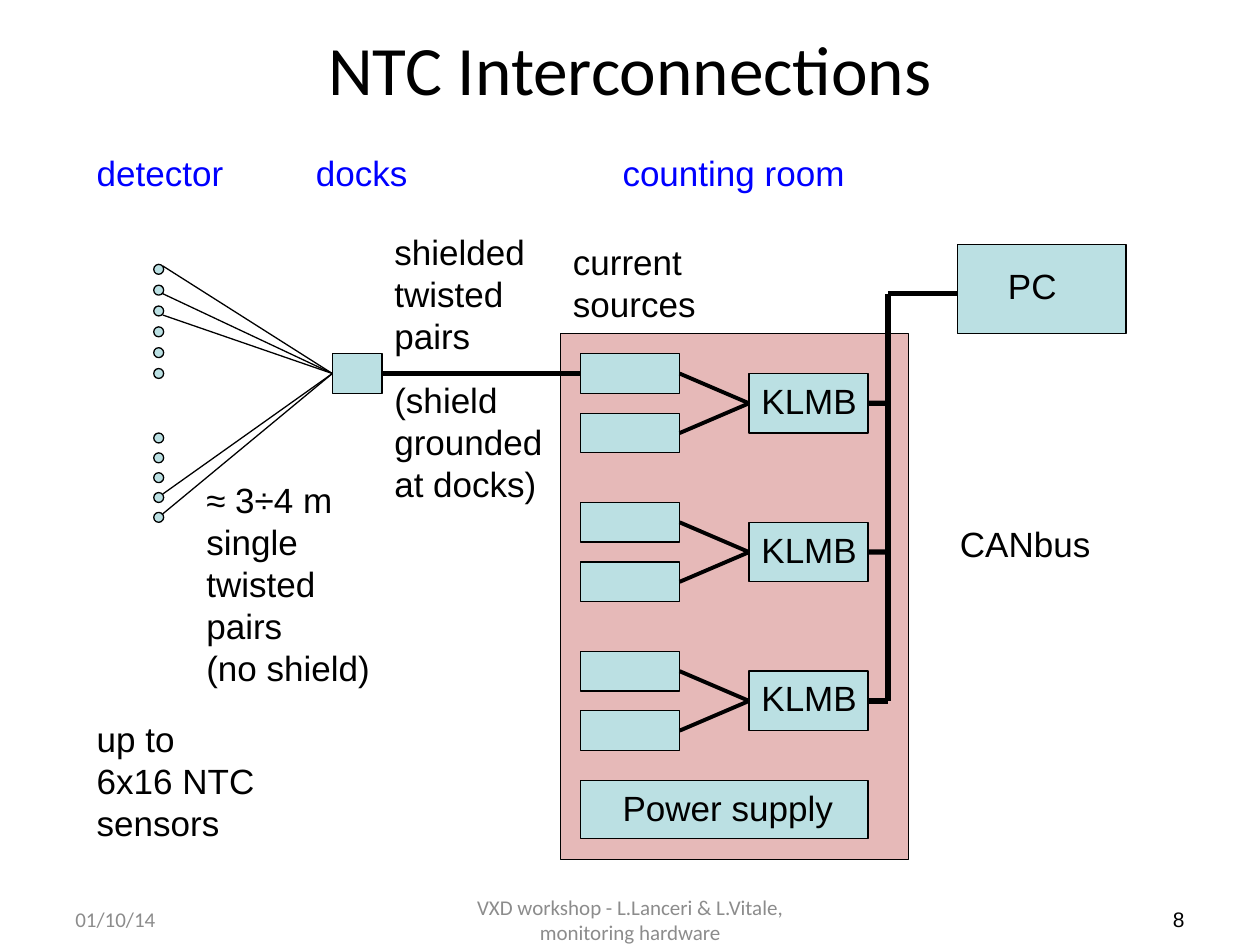
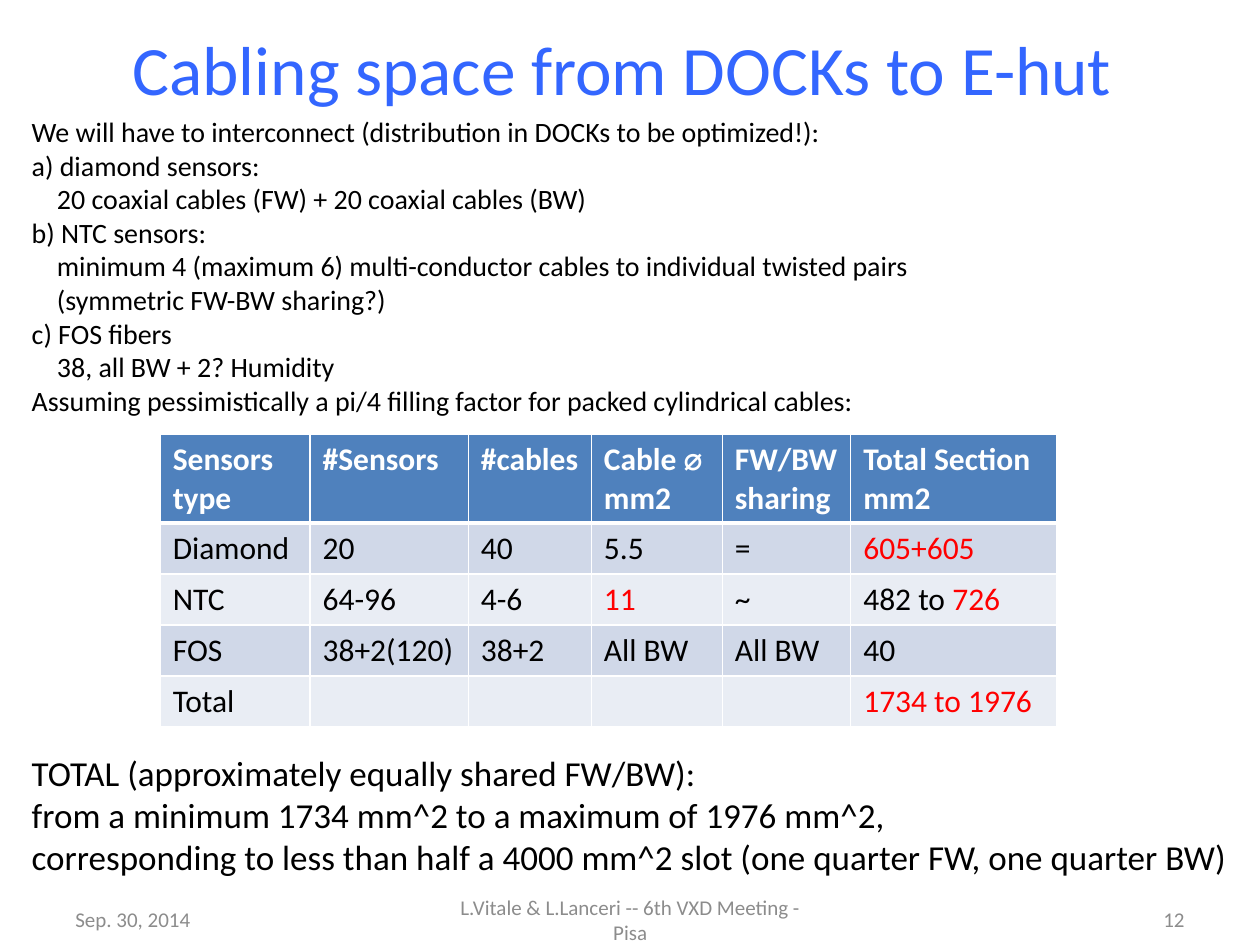
import pptx
import pptx.util
import pptx.dml.color
import pptx.enum.shapes
import pptx.enum.text
import lxml.etree

Cm = pptx.util.Cm
Pt = pptx.util.Pt
KIND = pptx.enum.shapes.MSO_SHAPE
ALIGN = pptx.enum.text.PP_ALIGN
MID = pptx.enum.text.MSO_ANCHOR.MIDDLE

BLACK, WHITE, GREY, RED = "000000", "FFFFFF", "8C8C8C", "FF0000"
BLUE, SKY = "0000FF", "3366FF"
PALE, PINK = "BBE0E3", "E6B9B8"
HEAD, BANDS = "4F81BD", ("D0D8E8", "E9EDF4")
NS = "http://schemas.openxmlformats.org/drawingml/2006/main"

FOOT = {"top": 18.03, "high": 1.01}
BOARD = "KLMB"
ZONES = [("detector", 1.7), ("docks", 6.12), ("counting room", 12.3)]
LABELS = [
    ("up to\n6x16 NTC\nsensors", 1.7, 14.33, 3.71, 2.82),
    ("PC", 20.07, 5.21, 1.5, 1.12),
    ("CANbus", 19.1, 10.41, 3.18, 1.12),
    ("Power supply", 12.3, 15.73, 4.8, 1.12),
    ("≈ 3÷4 m\nsingle\ntwisted\npairs\n(no shield)", 3.91, 9.53, 3.84, 4.52),
    ("shielded\ntwisted\npairs", 7.7, 4.52, 3.18, 2.82),
    ("(shield\ngrounded\nat docks)", 7.7, 7.5, 3.53, 2.82),
    ("current\nsources", 11.3, 4.72, 3.0, 1.96),
]
DOTS = [(5.33, 0.42, 6), (8.73, 0.4, 5)]
WIRES = [5.36, 5.92, 6.35, 9.96, 10.36]
GROUPS, PITCH = 3, 3.0
BUS_X, BUS_TOP = 17.9, 5.92

INTRO = [
    ("We will have to interconnect (distribution in DOCKs to be optimized!):", 0),
    ("a) diamond sensors:", 0),
    ("20 coaxial cables (FW) + 20 coaxial cables (BW)", 1),
    ("b) NTC sensors:", 0),
    ("minimum 4 (maximum 6) multi-conductor cables to individual twisted pairs", 1),
    ("(symmetric FW-BW sharing?)", 1),
    ("c) FOS fibers", 0),
    ("38, all BW + 2? Humidity", 1),
    ("Assuming pessimistically a pi/4 filling factor for packed cylindrical cables:", 0),
]
TOTAL = [
    "TOTAL (approximately equally shared FW/BW):",
    "from a minimum 1734 mm^2 to a maximum of 1976 mm^2,",
    "corresponding to less than half a 4000 mm^2 slot (one quarter FW, one quarter BW)",
]
ROWS = [
    ["Sensors type", "#Sensors", "#cables", "Cable ⌀\nmm2", "FW/BW\nsharing", "Total Section\nmm2"],
    ["Diamond", "20", "40", "5.5", "=", "|605+605"],
    ["NTC", "64-96", "4-6", "|11", "~", "482 to |726"],
    ["FOS", "38+2(120)", "38+2", "All BW", "All BW", "40"],
    ["Total", "", "", "", "", "|1734 to 1976"],
]
WIDTHS = [3.02, 3.19, 2.48, 2.64, 2.59, 4.16]


def tint(code):
    return pptx.dml.color.RGBColor.from_string(code)


def write(frame, text, size=20, font="Arial", color=BLACK, bold=False, align=None):
    for line in text.split("\n"):
        para = frame.paragraphs[-1]
        if para.runs:
            para = frame.add_paragraph()
        para.alignment = align
        for part, shade in zip(line.split("|"), (color, RED)):
            if part:
                run = para.add_run()
                run.text = part
                run.font.size = Pt(size)
                run.font.name = font
                run.font.bold = bold
                run.font.color.rgb = tint(shade)


def label(slide, text, x, y, w, h, wrap=False, anchor=None, **form):
    frame = slide.shapes.add_textbox(Cm(x), Cm(y), Cm(w), Cm(h)).text_frame
    frame.word_wrap = wrap
    frame.vertical_anchor = anchor
    write(frame, text, **form)
    return frame


def box(slide, x, y, w, h, fill=PALE, kind=KIND.RECTANGLE):
    shape = slide.shapes.add_shape(kind, Cm(x), Cm(y), Cm(w), Cm(h))
    shape.shadow.inherit = False
    shape.fill.solid()
    shape.fill.fore_color.rgb = tint(fill)
    shape.line.color.rgb = tint(BLACK)
    shape.line.width = Pt(0.75)
    return shape


def link(slide, start, end, width):
    line = slide.shapes.add_connector(pptx.enum.shapes.MSO_CONNECTOR.STRAIGHT, 0, 0, 0, 0)
    if isinstance(start[0], (int, float)):
        line.begin_x, line.begin_y = Cm(start[0]), Cm(start[1])
    else:
        line.begin_connect(*start)
    if isinstance(end[0], (int, float)):
        line.end_x, line.end_y = Cm(end[0]), Cm(end[1])
    else:
        line.end_connect(*end)
    line.line.color.rgb = tint(BLACK)
    line.line.width = Pt(width)
    lxml.etree.SubElement(line._element.spPr, f"{{{NS}}}effectLst")


def base(deck, title, color, date, foot, number, look):
    slide = deck.slides.add_slide(deck.slide_layouts[5])
    head = slide.shapes.title
    head.left, head.top, head.width, head.height = Cm(1.27), Cm(0.36), Cm(22.86), Cm(2.03)
    head.text_frame.auto_size = pptx.enum.text.MSO_AUTO_SIZE.NONE
    head.text_frame.vertical_anchor = MID
    write(head.text_frame, title, size=39.6, font="Calibri", color=color, align=ALIGN.CENTER)
    plain = {"font": "Calibri", "color": GREY}
    for text, x, w, align, form in [
        (date, 1.27, 5.92, ALIGN.LEFT, plain),
        (foot, 8.68, 8.05, ALIGN.CENTER, plain),
        (number, 18.21, 5.92, ALIGN.RIGHT, look or plain),
    ]:
        label(slide, text, x, FOOT["top"], w, FOOT["high"], wrap=True, anchor=MID,
              size=12, align=align, **form)
    return slide


def wiring(deck):
    slide = base(deck, "NTC Interconnections", BLACK, "01/10/14",
                 "VXD workshop - L.Lanceri & L.Vitale, monitoring hardware", "8",
                 {"font": "Arial", "color": BLACK})
    box(slide, 11.3, 6.73, 7.01, 10.6, fill=PINK)
    tops = [7.13 + PITCH * i for i in range(GROUPS)]
    pairs = [[box(slide, 11.7, top + step, 2, 0.8) for step in (0, 1.2)] for top in tops]
    boards = [box(slide, 15.1, top + 0.4, 2.4, 1.2) for top in tops]
    box(slide, 11.7, 15.73, 5.8, 1.18)
    box(slide, 19.3, 4.93, 3.4, 1.8)
    dock = box(slide, 6.7, 7.13, 1, 0.8)
    for top, gap, count in DOTS:
        for i in range(count):
            box(slide, 3.1, top + gap * i, 0.2, 0.2, kind=KIND.OVAL)

    link(slide, (dock, 3), (pairs[0][0], 1), 3)
    for top, pair, board in zip(tops, pairs, boards):
        for source in pair:
            link(slide, (source, 3), (board, 1), 2.25)
        link(slide, (board, 3), (BUS_X, top + 1), 3)
    link(slide, (BUS_X, tops[-1] + 1), (BUS_X, BUS_TOP), 3)
    link(slide, (BUS_X, BUS_TOP), (19.3, BUS_TOP), 3)
    for y in WIRES:
        link(slide, (3.28, y), (dock, 1), 0.75)

    for text, x in ZONES:
        label(slide, text, x, 2.92, 5, 1.12, color=BLUE)
    for top in tops:
        label(slide, BOARD, 15.1, top + 0.39, 2.46, 1.12)
    for item in LABELS:
        label(slide, *item)


def edge(cell, low):
    props = cell._tc.get_or_add_tcPr()
    for i, (side, width) in enumerate([("L", 1), ("R", 1), ("T", 1), ("B", low)]):
        line = lxml.etree.Element(f"{{{NS}}}ln{side}", w=str(Pt(width)))
        fill = lxml.etree.SubElement(line, f"{{{NS}}}solidFill")
        lxml.etree.SubElement(fill, f"{{{NS}}}srgbClr", val=WHITE)
        props.insert(i, line)


def cables(deck):
    slide = base(deck, "Cabling space from DOCKs to E-hut ", SKY, "Sep. 30, 2014",
                 "L.Vitale & L.Lanceri -- 6th VXD Meeting - Pisa", "12", None)
    frame = label(slide, "\n".join(text for text, level in INTRO),
                  0.46, 2.21, 24.77, 15.75, wrap=True, size=16, font="Calibri")
    frame.margin_left = frame.margin_right = Cm(0.18)
    frame.margin_top = frame.margin_bottom = Cm(0.1)
    write(frame, "\n".join(TOTAL), font="Calibri")
    for para, (text, level) in zip(frame.paragraphs, INTRO):
        if level:
            para._p.get_or_add_pPr().set("marL", str(Cm(0.51)))
    frame.paragraphs[len(INTRO)].space_before = Pt(191.5)

    table = slide.shapes.add_table(len(ROWS), len(WIDTHS), Cm(3.23), Cm(8.76),
                                   Cm(sum(WIDTHS)), Cm(5.94)).table
    for col, width in zip(table.columns, WIDTHS):
        col.width = Cm(width)
    for r, row in enumerate(ROWS):
        table.rows[r].height = Cm(1.03 if r else 1.78)
        for c, text in enumerate(row):
            cell = table.cell(r, c)
            cell.fill.solid()
            cell.fill.fore_color.rgb = tint(BANDS[(r - 1) % 2] if r else HEAD)
            edge(cell, 1 if r else 3)
            write(cell.text_frame, text, size=18, font="Calibri",
                  color=BLACK if r else WHITE, bold=r == 0)


def main():
    deck = pptx.Presentation()
    deck.slide_width, deck.slide_height = Cm(25.4), Cm(19.05)
    wiring(deck)
    cables(deck)
    deck.save("out.pptx")


if __name__ == "__main__":
    main()
